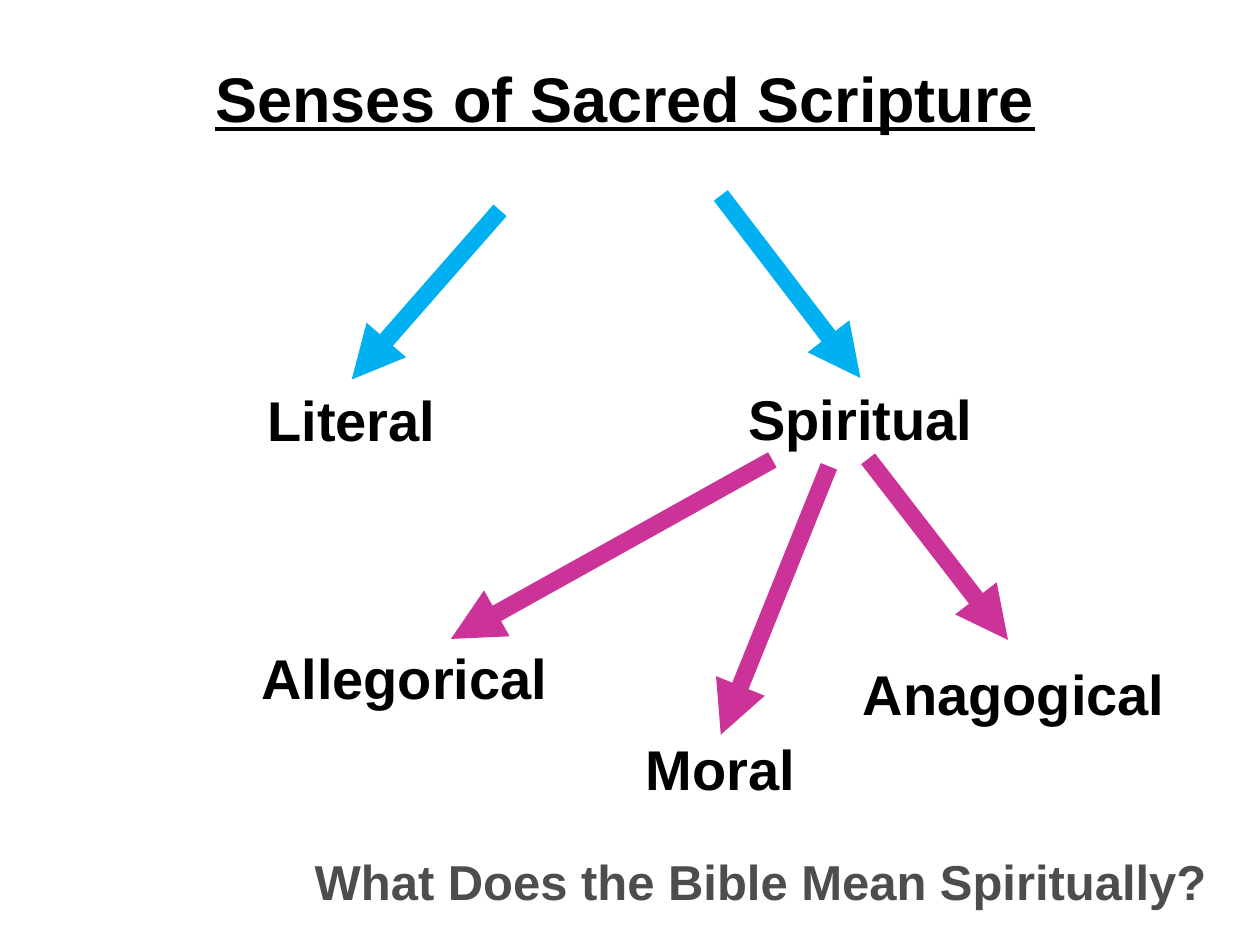
from dataclasses import dataclass
from typing import Optional

import pptx
import pptx.dml.color
import pptx.enum.shapes
import pptx.enum.text
import pptx.oxml
import pptx.oxml.ns
import pptx.util

Cm = pptx.util.Cm
Pt = pptx.util.Pt
Align = pptx.enum.text.PP_ALIGN
SPACE = pptx.oxml.ns.nsdecls("a")
HUES = {
    "ink": "000000",
    "gray": "4D4D4D",
    "white": "FFFFFF",
    "blue": "00B0F0",
    "pink": "CC3399",
    "aqua": "33CCFF",
    "rose": "FF6666",
}


@dataclass
class Label:
    text: str
    left: float
    top: float
    width: float
    height: float = 1.63
    size: int = 32
    hue: str = "ink"
    align: Align = Align.CENTER
    under: bool = False
    edge: Optional[str] = None
    glow: Optional[str] = None


@dataclass
class Arrow:
    start: tuple[float, float]
    end: tuple[float, float]
    hue: str
    goal: Optional[str] = None


LABELS = [
    Label("What Does the Bible Mean Spiritually?", 3.61, 17.04, 20.96, 2.24,
          size=28, hue="gray", align=Align.RIGHT, edge="white"),
    Label("Senses of Sacred Scripture", 1.27, 1.07, 22.66, 1.8, size=36, under=True),
    Label("Literal", 4.45, 7.65, 5.28, glow="aqua"),
    Label("Spiritual", 14.17, 7.62, 6.35, glow="aqua"),
    Label("Allegorical ", 4.98, 12.85, 6.35, glow="rose"),
    Label("Moral", 11.35, 14.68, 6.35, glow="rose"),
    Label("Anagogical", 16.31, 13.18, 8.26, glow="rose"),
]
ARROWS = [
    Arrow((10.08, 4.24), (7.09, 7.65), "blue", "Literal"),
    Arrow((14.53, 3.94), (17.35, 7.62), "blue", "Spiritual"),
    Arrow((15.57, 9.27), (9.09, 12.88), "pink"),
    Arrow((17.5, 9.25), (20.32, 12.9), "pink"),
    Arrow((16.71, 9.4), (14.53, 14.81), "pink"),
]


def tint(name: str) -> pptx.dml.color.RGBColor:
    return pptx.dml.color.RGBColor.from_string(HUES[name])


def node(xml: str):
    return pptx.oxml.parse_xml(xml)


def write(slide, label: Label):
    box = slide.shapes.add_textbox(
        Cm(label.left), Cm(label.top), Cm(label.width), Cm(label.height))
    frame = box.text_frame
    frame.word_wrap = True
    frame.auto_size = pptx.enum.text.MSO_AUTO_SIZE.SHAPE_TO_FIT_TEXT
    para = frame.paragraphs[0]
    para.alignment = label.align
    run = para.add_run()
    run.text = label.text
    font = run.font
    font.name = "Arial"
    font.size = Pt(label.size)
    font.bold = True
    font.underline = label.under
    font.color.rgb = tint(label.hue)
    if label.edge:
        run._r.get_or_add_rPr().insert(0, node(
            f'<a:ln {SPACE} w="{Pt(0.75)}"><a:solidFill>'
            f'<a:srgbClr val="{HUES[label.edge]}"/></a:solidFill></a:ln>'))
    if label.glow:
        box._element.spPr.append(node(
            f'<a:effectLst {SPACE}><a:glow rad="{Pt(5)}">'
            f'<a:srgbClr val="{HUES[label.glow]}"><a:alpha val="60000"/></a:srgbClr>'
            f'</a:glow></a:effectLst>'))
    return box


def point(slide, arrow: Arrow, boxes: dict) -> None:
    link = slide.shapes.add_connector(
        pptx.enum.shapes.MSO_CONNECTOR.STRAIGHT,
        *map(Cm, arrow.start + arrow.end))
    if arrow.goal:
        link.end_connect(boxes[arrow.goal], 0)
    link.line.width = Pt(10)
    link.line.color.rgb = tint(arrow.hue)
    link.line._get_or_add_ln().append(node(f'<a:tailEnd {SPACE} type="triangle"/>'))
    link._element.spPr.append(node(f"<a:effectLst {SPACE}/>"))


def main() -> None:
    deck = pptx.Presentation()
    deck.slide_width, deck.slide_height = Cm(25.4), Cm(19.05)
    slide = deck.slides.add_slide(deck.slide_layouts[6])
    slide.background.fill.solid()
    slide.background.fill.fore_color.rgb = tint("white")
    boxes = {label.text: write(slide, label) for label in LABELS}
    for arrow in ARROWS:
        point(slide, arrow, boxes)
    deck.save("out.pptx")


if __name__ == "__main__":
    main()
